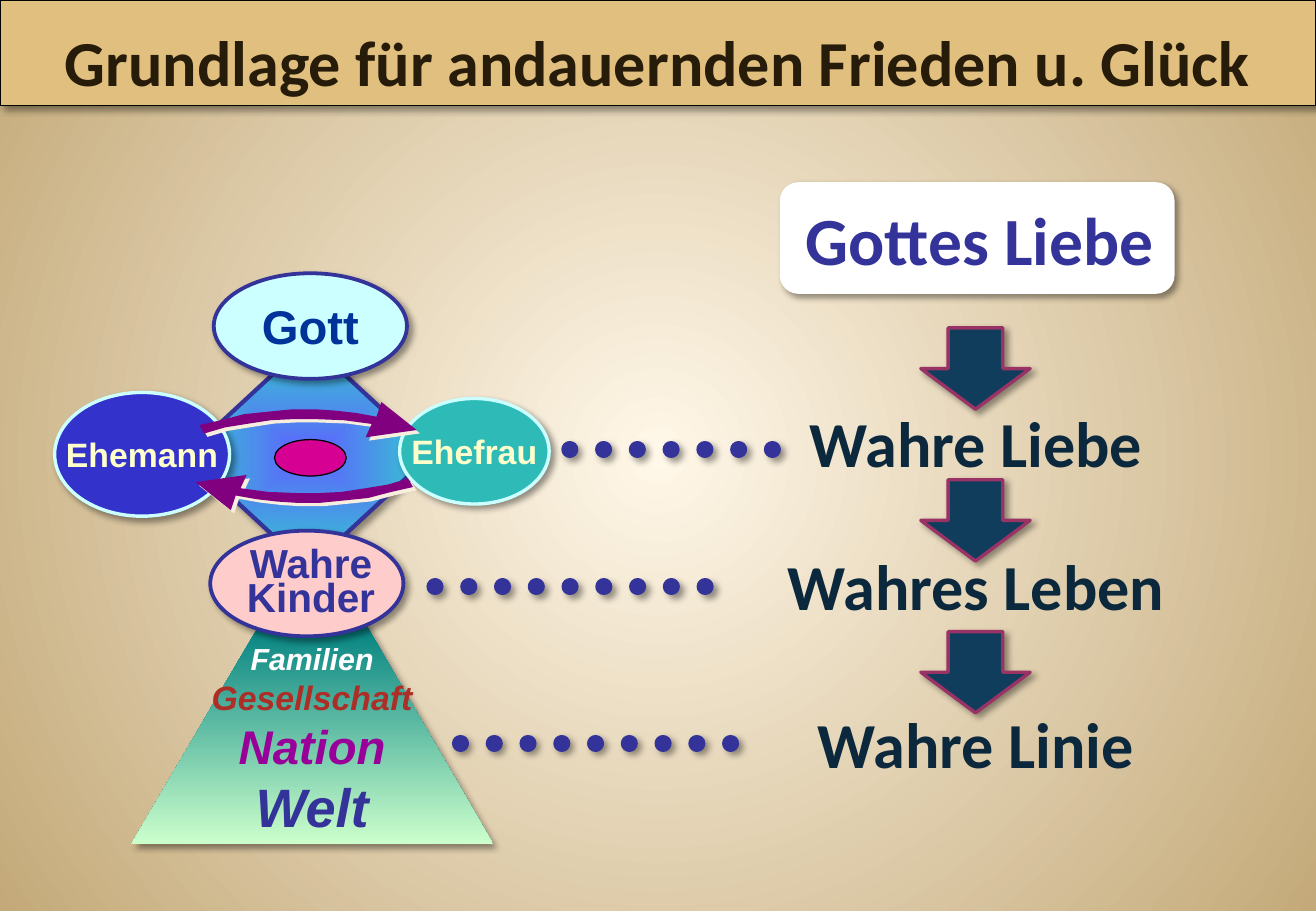
"""Build the slide on the foundation of lasting peace and happiness."""
from lxml import etree
from pptx import Presentation
from pptx.dml.color import RGBColor
from pptx.enum.dml import MSO_LINE
from pptx.enum.shapes import MSO_CONNECTOR, MSO_SHAPE
from pptx.enum.text import MSO_ANCHOR, MSO_AUTO_SIZE, PP_ALIGN
from pptx.oxml.ns import qn
from pptx.util import Pt

CENTER = PP_ALIGN.CENTER
MIDDLE, BOTTOM = MSO_ANCHOR.MIDDLE, MSO_ANCHOR.BOTTOM
NO_FIT = MSO_AUTO_SIZE.NONE
OVAL, DIAMOND = MSO_SHAPE.OVAL, MSO_SHAPE.DIAMOND
ROUNDED, DOWN_ARROW = MSO_SHAPE.ROUNDED_RECTANGLE, MSO_SHAPE.DOWN_ARROW
STRAIGHT, DOTTED = MSO_CONNECTOR.STRAIGHT, MSO_LINE.ROUND_DOT

BLACK = RGBColor(0x00, 0x00, 0x00)
WHITE = RGBColor(0xFF, 0xFF, 0xFF)
CREAM = RGBColor(0xFF, 0xF7, 0xE8)
SAND = RGBColor(0xC4, 0xAA, 0x7A)
GOLD = RGBColor(0xE1, 0xBF, 0x7E)
BROWN = RGBColor(0x26, 0x1C, 0x09)
INDIGO = RGBColor(0x33, 0x33, 0x99)
ROYAL = RGBColor(0x33, 0x33, 0xCC)
NAVY = RGBColor(0x00, 0x33, 0x99)
PERIWINKLE = RGBColor(0x5D, 0x64, 0xFF)
TURQUOISE = RGBColor(0x33, 0xCC, 0xCC)
SEA = RGBColor(0x2E, 0xBB, 0xB8)
ICE = RGBColor(0xCC, 0xFF, 0xFF)
PINK = RGBColor(0xFF, 0xCC, 0xCC)
LEMON = RGBColor(0xFF, 0xFF, 0xCC)
TEAL = RGBColor(0x00, 0x80, 0x80)
MINT = RGBColor(0xCC, 0xFF, 0xCC)
RED = RGBColor(0xAD, 0x2E, 0x27)
VIOLET = RGBColor(0x99, 0x00, 0x99)
PURPLE = RGBColor(0x80, 0x00, 0x80)
MAGENTA = RGBColor(0xD6, 0x00, 0x93)
INK = RGBColor(0x0C, 0x28, 0x3D)
PETROL = RGBColor(0x11, 0x3D, 0x5C)
PLUM = RGBColor(0x99, 0x33, 0x66)
GLOW = RGBColor(0xF7, 0xEE, 0xDD)


def cast_shadow(shape, color=BLACK, opacity=40, blur=4, distance=3):
    properties = next(shape.element.iter(qn("p:spPr")))
    effects = etree.SubElement(properties, qn("a:effectLst"))
    outer = etree.SubElement(effects, qn("a:outerShdw"), blurRad=str(Pt(blur)),
                             dist=str(Pt(distance)), dir="2700000",
                             algn="ctr", rotWithShape="0")
    tint = etree.SubElement(outer, qn("a:srgbClr"), val=str(color))
    etree.SubElement(tint, qn("a:alpha"), val=str(opacity * 1000))


def add_words(paragraph, words, size, color, font="Arial", italic=False):
    paragraph.alignment = CENTER
    run = paragraph.add_run()
    run.text = words
    run.font.name = font
    run.font.size = Pt(size)
    run.font.bold = True
    run.font.italic = italic
    run.font.color.rgb = color


deck = Presentation()
deck.slide_width, deck.slide_height = Pt(780), Pt(540)
slide = deck.slides.add_slide(deck.slide_layouts[5])
shapes = slide.shapes

title = shapes.title
title.left, title.top, title.width, title.height = Pt(0), Pt(0), Pt(780), Pt(62.6)
title.fill.solid()
title.fill.fore_color.rgb = GOLD
title.line.color.rgb = BLACK
title.line.width = Pt(0.75)
title.text_frame.auto_size = NO_FIT
title.text_frame.vertical_anchor = BOTTOM
add_words(title.text_frame.paragraphs[0],
          "Grundlage für andauernden Frieden u. Glück", 38, BROWN, "Calibri")
cast_shadow(title)

family_diamond = shapes.add_shape(DIAMOND, Pt(110.2), Pt(202.3), Pt(145.4), Pt(134.6))
family_diamond.line.color.rgb = INDIGO
family_diamond.line.width = Pt(2.5)
cast_shadow(family_diamond)

for fill, spread, inner, outer in (
    (slide.background.fill, "circle", CREAM, SAND),
    (family_diamond.fill, "shape", PERIWINKLE, TURQUOISE),
):
    fill.gradient()
    fill.gradient_stops[0].color.rgb = inner
    fill.gradient_stops[1].color.rgb = outer
    linear = next(slide.element.iter(qn("a:lin")))
    radial = etree.Element(qn("a:path"), path=spread)
    etree.SubElement(radial, qn("a:fillToRect"), l="50000", t="50000",
                     r="50000", b="50000")
    linear.getparent().replace(linear, radial)

lineage = shapes.build_freeform(Pt(77.8), Pt(500.4), 1.0)
lineage.add_line_segments([(Pt(x), Pt(y)) for x, y in (
    (154.8, 368.6), (216, 368.6), (292.3, 500.4))])
lineage_pyramid = lineage.convert_to_shape()
lineage_pyramid.fill.gradient()
lineage_pyramid.fill.gradient_angle = 270
lineage_pyramid.fill.gradient_stops[0].color.rgb = TEAL
lineage_pyramid.fill.gradient_stops[1].color.rgb = MINT
lineage_pyramid.line.fill.background()
cast_shadow(lineage_pyramid)

love_panel = shapes.add_shape(ROUNDED, Pt(462.2), Pt(108), Pt(234), Pt(66.2))
love_panel.fill.solid()
love_panel.fill.fore_color.rgb = WHITE
love_panel.line.fill.background()
cast_shadow(love_panel)

for step in range(3):
    descent = shapes.add_shape(DOWN_ARROW, Pt(545.8), Pt(194.4 + 90 * step),
                               Pt(64.8), Pt(48.2))
    descent.fill.solid()
    descent.fill.fore_color.rgb = PETROL
    descent.line.color.rgb = PLUM
    descent.line.width = Pt(2)
    cast_shadow(descent)

for start, end, y in ((337.7, 468, 266.4), (257.8, 427, 347.8), (272.9, 442.1, 440.6)):
    dots = shapes.add_connector(STRAIGHT, Pt(start), Pt(y), Pt(end), Pt(y))
    dots.line.color.rgb = INDIGO
    dots.line.width = Pt(10)
    dots.line.dash_style = DOTTED
    next(dots.element.iter(qn("a:ln"))).set("cap", "rnd")
    cast_shadow(dots)

for label, box, color, edge, edge_width, size, label_color in (
    ("Ehemann", (32.4, 232.6, 103.7, 73.4), ROYAL, ICE, 2, 20, LEMON),
    ("Ehefrau", (236.9, 236.2, 88.6, 62.6), SEA, ICE, 2, 20, LEMON),
    ("Gott", (126.7, 162, 114.5, 62.6), ICE, INDIGO, 2.25, 28, NAVY),
    ("", (124.6, 314.6, 114.5, 62.6), PINK, INDIGO, 2.25, 0, INDIGO),
    ("", (162.7, 260.6, 42.5, 21.6), MAGENTA, BLACK, 0.75, 0, BLACK),
):
    member = shapes.add_shape(OVAL, *map(Pt, box))
    member.fill.solid()
    member.fill.fore_color.rgb = color
    member.line.color.rgb = edge
    member.line.width = Pt(edge_width)
    if color == MAGENTA:
        member.shadow.inherit = False
    else:
        cast_shadow(member)
    if label:
        member.text_frame.word_wrap = False
        member.text_frame.vertical_anchor = MIDDLE
        add_words(member.text_frame.paragraphs[0], label, size, label_color)

GIVING = (
    (220.3, 251.3), (203.8, 249.1), (185.8, 248.4), (174.2, 248.4), (160.6, 249.1),
    (146.2, 251.3), (133.2, 253.4), (121, 257), (118.1, 252), (131, 249.1),
    (144.7, 245.5), (158.4, 244.1), (173.5, 242.6), (186.5, 242.6), (198.7, 243.4),
    (211, 244.8), (223.2, 247), (226.1, 238.3), (247, 254.9), (216.7, 259.2),
)
RECEIVING = [(362.9 - x, 540.7 - y) for x, y in GIVING]
for outline in (GIVING, RECEIVING):
    points = [(Pt(x), Pt(y)) for x, y in outline]
    exchange = shapes.build_freeform(*points[0], 1.0)
    exchange.add_line_segments(points[1:])
    exchange_arrow = exchange.convert_to_shape()
    exchange_arrow.fill.solid()
    exchange_arrow.fill.fore_color.rgb = PURPLE
    exchange_arrow.line.fill.background()
    cast_shadow(exchange_arrow, GLOW, 100, 0, 2.8)

for box, font, italic, spacing, lines in (
    ((411.8, 113.8, 337.7, 55.4), "Calibri", False, 1, [[("Gottes Liebe", 40, INDIGO)]]),
    ((409.7, 235.4, 337.7, 53.3), "Calibri", False, 1, [[("Wahre Liebe", 38, INK)]]),
    ((409.7, 320.4, 337.7, 53.3), "Calibri", False, 1, [[("Wahres Leben", 38, INK)]]),
    ((409.7, 414, 337.7, 53.3), "Calibri", False, 1, [[("Wahre Linie", 38, INK)]]),
    ((109.4, 323.3, 149.8, 48.2), "Arial", False, 0.7,
     [[("Wahre", 24, INDIGO)], [("Kinder", 24, INDIGO)]]),
    ((116.6, 375.8, 136.8, 126), "Arial", True, 1,
     [[("Familien ", 18, WHITE), ("Gesellschaft", 20, RED)],
      [("Nation", 28, VIOLET)], [("Welt", 32, INDIGO)]]),
):
    caption = shapes.add_textbox(*map(Pt, box)).text_frame
    caption.word_wrap = True
    for index, line in enumerate(lines):
        paragraph = caption.add_paragraph() if index else caption.paragraphs[0]
        paragraph.line_spacing = spacing
        for words, size, color in line:
            add_words(paragraph, words, size, color, font, italic)

deck.save("out.pptx")
